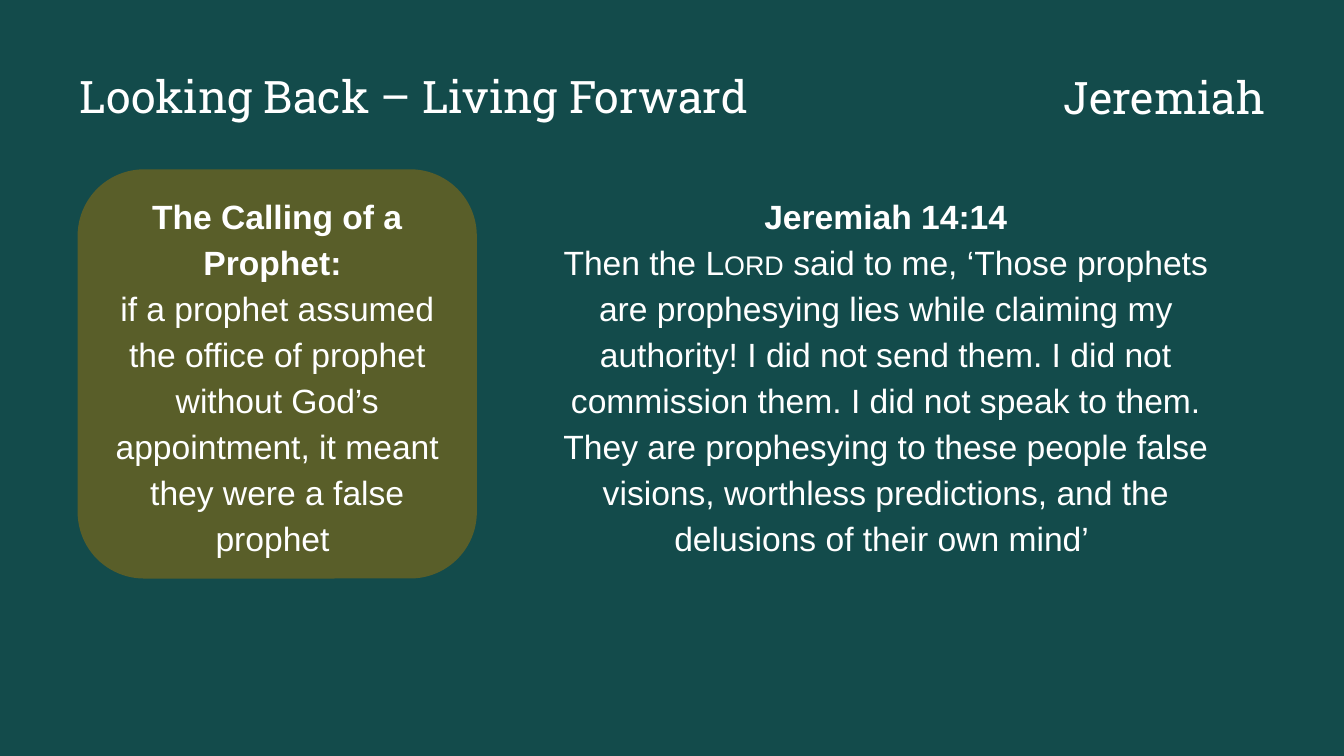
"""Build the Jeremiah slide: two headings above a calling panel and a scripture panel."""
from pptx import Presentation
from pptx.dml.color import RGBColor
from pptx.enum.shapes import MSO_SHAPE
from pptx.enum.text import MSO_ANCHOR, PP_ALIGN
from pptx.util import Inches, Pt

THEME = {
    "background": RGBColor.from_string("134B4B"),
    "panel": RGBColor.from_string("595E29"),
    "text": RGBColor.from_string("FFFFFF"),
    "heading_font": "Roboto Slab",
    "heading_size": Pt(32),
    "body_font": "Arial",
    "body_size": Pt(24),
    "line_spacing": 1.14,
}


def style_paragraph(paragraph, role, alignment):
    paragraph.alignment = alignment
    paragraph.font.name = THEME[f"{role}_font"]
    paragraph.font.size = THEME[f"{role}_size"]
    paragraph.font.color.rgb = THEME["text"]


presentation = Presentation()
presentation.slide_width = Inches(13.33)
presentation.slide_height = Inches(7.5)
slide = presentation.slides.add_slide(presentation.slide_layouts[6])
slide.background.fill.solid()
slide.background.fill.fore_color.rgb = THEME["background"]

RIGHT_EDGE = 12.55
HEADING_HEIGHT = 0.68
headings = [
    ("Looking Back – Living Forward", 0.79, 0.68, 6.68, PP_ALIGN.LEFT),
    ("Jeremiah", RIGHT_EDGE - 2.05, 0.69, 2.05, PP_ALIGN.RIGHT),
]
for text, left, top, width, alignment in headings:
    heading = slide.shapes.add_textbox(
        Inches(left), Inches(top), Inches(width), Inches(HEADING_HEIGHT)
    )
    frame = heading.text_frame
    frame.word_wrap = True
    frame.margin_left = frame.margin_right = frame.margin_top = frame.margin_bottom = 0
    frame.text = text
    style_paragraph(frame.paragraphs[0], "heading", alignment)

PANEL_TOP, PANEL_HEIGHT = 1.68, 4.06
panels = [
    (0.77, 3.96, THEME["panel"], "The Calling of a Prophet: ", [
        ("if a prophet assumed the office of prophet without God’s appointment, "
         "it meant they were a false prophet ", False),
    ]),
    (5.01, 7.55, None, "Jeremiah 14:14", [
        ("Then the ", False),
        ("Lord", True),
        (" said to me, ‘Those prophets are prophesying lies while claiming my "
         "authority! I did not send them. I did not commission them. I did not "
         "speak to them. They are prophesying to these people false visions, "
         "worthless predictions, and the delusions of their own mind’ ", False),
    ]),
]
for left, width, fill_color, title, body_runs in panels:
    panel = slide.shapes.add_shape(
        MSO_SHAPE.ROUNDED_RECTANGLE,
        Inches(left), Inches(PANEL_TOP), Inches(width), Inches(PANEL_HEIGHT),
    )
    panel.shadow.inherit = False
    panel.line.fill.background()
    if fill_color is None:
        panel.fill.background()
    else:
        panel.fill.solid()
        panel.fill.fore_color.rgb = fill_color

    frame = panel.text_frame
    frame.word_wrap = True
    frame.vertical_anchor = MSO_ANCHOR.MIDDLE
    frame.text = title
    title_paragraph = frame.paragraphs[0]
    body_paragraph = frame.add_paragraph()
    for text, small_caps in body_runs:
        run = body_paragraph.add_run()
        run.text = text
        if small_caps:
            run.font._element.set("cap", "small")
    for paragraph in frame.paragraphs:
        style_paragraph(paragraph, "body", PP_ALIGN.CENTER)
        paragraph.line_spacing = THEME["line_spacing"]
    title_paragraph.font.bold = True

presentation.save("out.pptx")
